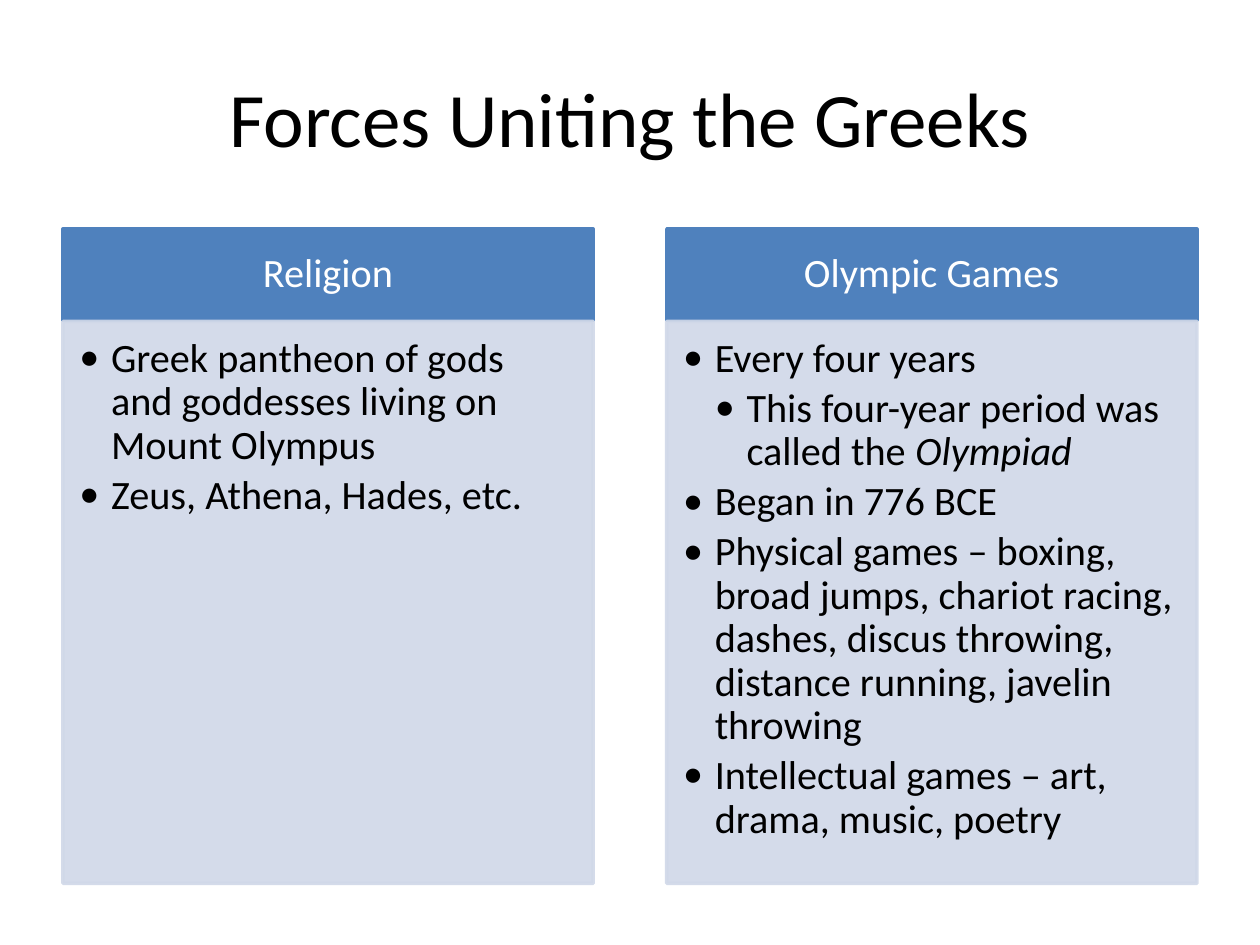
"""Build the slide on the forces uniting the Greeks."""
from lxml.etree import SubElement
from pptx import Presentation
from pptx.dml.color import RGBColor
from pptx.enum.shapes import MSO_SHAPE as Shape
from pptx.enum.text import MSO_ANCHOR as Anchor, PP_ALIGN as Align
from pptx.oxml.ns import qn
from pptx.util import Cm, Pt

TITLE = "Forces Uniting the Greeks"
COLUMNS = [
    ("Religion", [
        (1, [("Greek pantheon of gods and goddesses living on Mount Olympus", False)]),
        (1, [("Zeus, Athena, Hades, etc.", False)]),
    ]),
    ("Olympic Games", [
        (1, [("Every four years", False)]),
        (2, [("This four-year period was called the ", False), ("Olympiad", True)]),
        (1, [("Began in 776 BCE", False)]),
        (1, [("Physical games – boxing, broad jumps, chariot racing, dashes, "
              "discus throwing, distance running, javelin throwing", False)]),
        (1, [("Intellectual games – art, drama, music, poetry", False)]),
    ]),
]
BLACK, WHITE, BLUE, PALE = "000000", "FFFFFF", "4F81BD", "D0D8E8"
SLIDE_WIDTH, SLIDE_HEIGHT, MARGIN = 25.4, 19.05, 1.27
COLUMN_WIDTH, INDENT = 10.69, 0.64
HEADING_TOP, HEADING_HEIGHT = 4.62, 1.83
BODY_TOP, BODY_HEIGHT = 6.48, 11.33


def rgb(value):
    """Turn a hex string into a colour."""
    return RGBColor.from_string(value)


def write(holder, paragraphs, size=23, color=BLACK, align=Align.LEFT,
          anchor=Anchor.TOP, insets=(0.25, 0.13, 0.25, 0.13), spacing=0.9, after=0):
    """Write (level, runs) paragraphs; levels above zero get a bullet."""
    frame = holder.text_frame
    frame.word_wrap = True
    frame.vertical_anchor = anchor
    (frame.margin_left, frame.margin_top,
     frame.margin_right, frame.margin_bottom) = map(Cm, insets)
    for number, (level, runs) in enumerate(paragraphs):
        paragraph = frame.add_paragraph() if number else frame.paragraphs[0]
        paragraph.alignment = align
        paragraph.line_spacing = spacing
        paragraph.space_after = Pt(after)
        if level:
            paragraph.level = level
            properties = paragraph._p.get_or_add_pPr()
            properties.set("marL", str(Cm(INDENT * level)))
            properties.set("indent", str(-Cm(INDENT)))
            SubElement(properties, qn("a:buFont")).set("typeface", "Calibri")
            SubElement(properties, qn("a:buChar")).set("char", "•")
        for words, italic in runs:
            run = paragraph.add_run()
            run.text = words
            run.font.name = "Calibri"
            run.font.size = Pt(size)
            run.font.italic = italic
            run.font.color.rgb = rgb(color)


def add_panel(slide, left, top, height, color, opacity=100):
    """Add one filled and outlined rectangle of column width."""
    panel = slide.shapes.add_shape(
        Shape.RECTANGLE, Cm(left), Cm(top), Cm(COLUMN_WIDTH), Cm(height))
    panel.shadow.inherit = False
    panel.fill.solid()
    panel.fill.fore_color.rgb = rgb(color)
    panel.line.color.rgb = rgb(color)
    panel.line.width = Pt(2)
    if opacity < 100:
        for tint in panel._element.spPr.iter(qn("a:srgbClr")):
            SubElement(tint, qn("a:alpha")).set("val", str(opacity * 1000))
    return panel


def main():
    """Lay out the title and the two columns."""
    deck = Presentation()
    deck.slide_width, deck.slide_height = Cm(SLIDE_WIDTH), Cm(SLIDE_HEIGHT)
    slide = deck.slides.add_slide(deck.slide_layouts[6])

    title = slide.shapes.add_textbox(
        Cm(MARGIN), Cm(0.76), Cm(SLIDE_WIDTH - 2 * MARGIN), Cm(3.18))
    write(title, [(0, [(TITLE, False)])], size=44, align=Align.CENTER,
          anchor=Anchor.MIDDLE, spacing=1.0)

    step = SLIDE_WIDTH - 2 * MARGIN - COLUMN_WIDTH
    for index, (force, points) in enumerate(COLUMNS):
        left = MARGIN + index * step
        heading = add_panel(slide, left, HEADING_TOP, HEADING_HEIGHT, BLUE)
        write(heading, [(0, [(force, False)])], color=WHITE, align=Align.CENTER,
              anchor=Anchor.MIDDLE, insets=(0.46, 0.25, 0.46, 0.25))
        body = add_panel(slide, left, BODY_TOP, BODY_HEIGHT, PALE, opacity=90)
        write(body, points, insets=(0.33, 0.33, 0.46, 0.5), after=3.7)

    deck.save("out.pptx")


if __name__ == "__main__":
    main()
